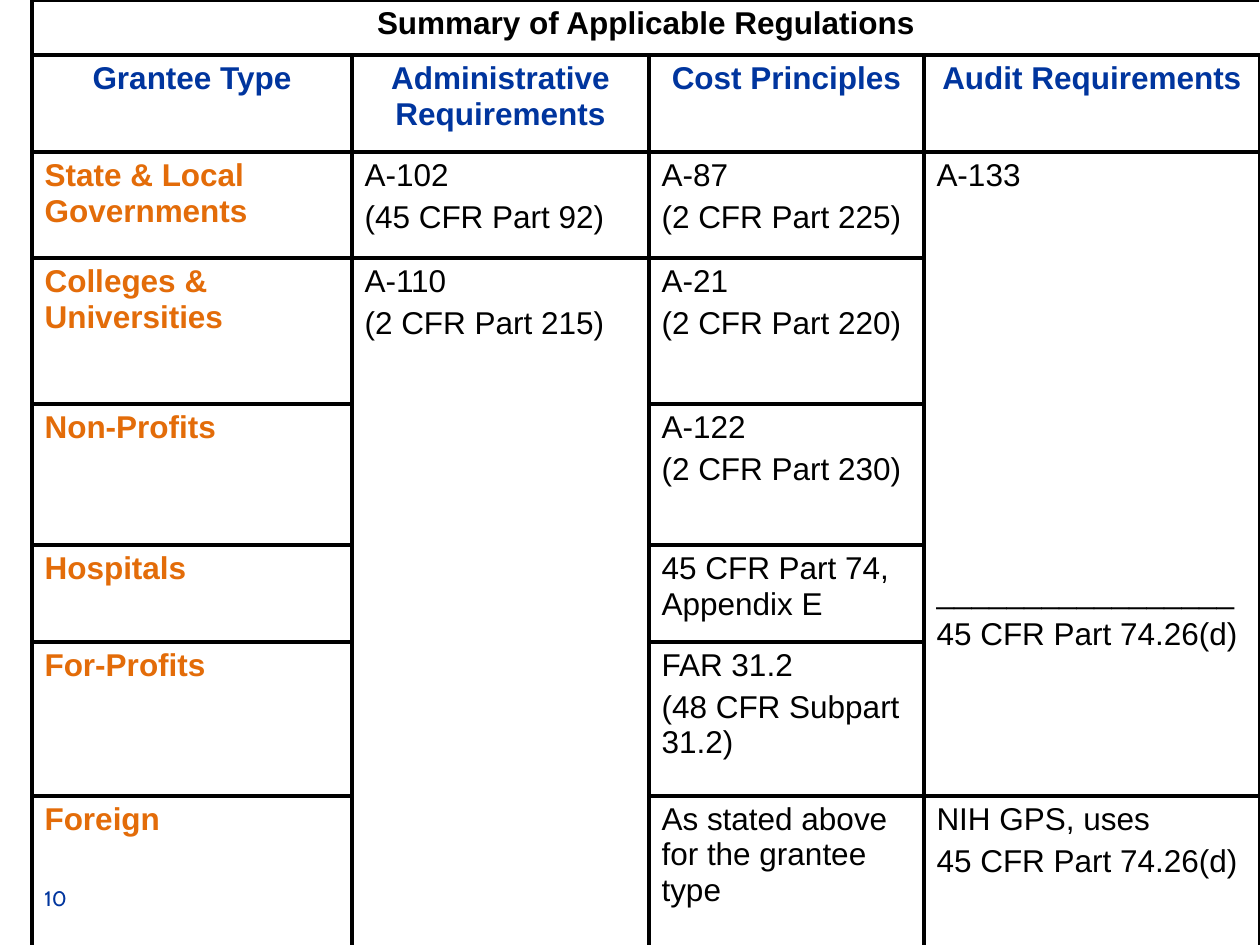
from lxml import etree
from pptx import Presentation
from pptx.dml.color import RGBColor
from pptx.enum.text import MSO_ANCHOR, PP_ALIGN
from pptx.oxml.ns import qn
from pptx.util import Emu, Pt

LEFT, CENTER = PP_ALIGN.LEFT, PP_ALIGN.CENTER
MIDDLE = MSO_ANCHOR.MIDDLE

# Content: row, column, row span, column span, role, paragraphs
AUDIT_RULE = "_________________"
CELLS = [
    (0, 0, 1, 4, "title", ["Summary of Applicable Regulations"]),
    (1, 0, 1, 1, "header", ["Grantee Type"]),
    (1, 1, 1, 1, "header", ["Administrative Requirements"]),
    (1, 2, 1, 1, "header", ["Cost Principles"]),
    (1, 3, 1, 1, "header", ["Audit Requirements"]),
    (2, 0, 1, 1, "grantee", ["State & Local Governments"]),
    (3, 0, 1, 1, "grantee", ["Colleges & Universities"]),
    (4, 0, 1, 1, "grantee", ["Non-Profits"]),
    (5, 0, 1, 1, "grantee", ["Hospitals"]),
    (6, 0, 1, 1, "grantee", ["For-Profits"]),
    (7, 0, 1, 1, "grantee", ["Foreign"]),
    (2, 1, 1, 1, "body", ["A-102", "(45 CFR Part 92)"]),
    (3, 1, 5, 1, "body", ["A-110", "(2 CFR Part 215)"]),
    (2, 2, 1, 1, "body", ["A-87", "(2 CFR Part 225)"]),
    (3, 2, 1, 1, "body", ["A-21", "(2 CFR Part 220)"]),
    (4, 2, 1, 1, "body", ["A-122", "(2 CFR Part 230)"]),
    (5, 2, 1, 1, "body", ["45 CFR Part 74, Appendix E"]),
    (6, 2, 1, 1, "body", ["FAR 31.2", "(48 CFR Subpart 31.2)"]),
    (7, 2, 1, 1, "body", ["As stated above for the grantee type"]),
    (2, 3, 5, 1, "body", ["A-133", AUDIT_RULE, "45 CFR Part 74.26(d)"]),
    (7, 3, 1, 1, "body", ["NIH GPS, uses", "45 CFR Part 74.26(d)"]),
]
SLIDE_NUMBER = "10"

# Layout in px
PX = 914400 // 126
SLIDE_SIZE = (1260, 945)
TABLE_LEFT, TABLE_TOP = 32, 0
COLUMN_WIDTHS = [320, 297, 275, 336]
ROW_HEIGHTS = [55, 97, 106, 146, 141, 97, 154, 272]
NUMBER_BOX = (32, 873, 294, 50)
THIN_EDGE = (7, 3)  # row and column of the cell below the thin line

THEME = {
    "font": "Arial", "size": Pt(18),
    "number_font": "Cabin", "number_size": Pt(12),
    "blue": RGBColor(0x00, 0x35, 0x9E),
    "line": "000000", "line_width": Pt(2.25), "thin_width": Pt(1),
    "gap": Pt(3.6), "rule_gap": Pt(218),
}
# Role: colour, bold, alignment
ROLES = {
    "title": (RGBColor(0, 0, 0), True, CENTER),
    "header": (THEME["blue"], True, CENTER),
    "grantee": (RGBColor(0xE3, 0x6C, 0x09), True, LEFT),
    "body": (RGBColor(0, 0, 0), False, LEFT),
}


def px(length):
    return Emu(length * PX)


def format_run(run, font, size, color, bold):
    run.font.name = font
    run.font.size = size
    run.font.bold = bold
    run.font.color.rgb = color


def add_borders(cell, widths):
    """Put the border lines ahead of the fill, in schema order."""
    properties = cell._tc.get_or_add_tcPr()
    for index, (side, width) in enumerate(widths.items()):
        line = etree.Element(qn("a:ln" + side), w=str(int(width)))
        fill = etree.SubElement(line, qn("a:solidFill"))
        etree.SubElement(fill, qn("a:srgbClr"), val=THEME["line"])
        properties.insert(index, line)


def border_widths(row, column, first, last):
    """Give a width to each side of the cell on its merged area's edge."""
    thick, thin = THEME["line_width"], THEME["thin_width"]
    above_thin = (row + 1, column) == THIN_EDGE
    below_thin = (row, column) == THIN_EDGE
    sides = {
        "L": (column == first[1], thick),
        "R": (column == last[1], thick),
        "T": (row == first[0], thin if below_thin else thick),
        "B": (row == last[0], thin if above_thin else thick),
    }
    return {side: width for side, (edge, width) in sides.items() if edge}


def fill_text(cell, role, lines):
    color, bold, alignment = ROLES[role]
    cell.text_frame.text = "\n".join(lines)
    for index, paragraph in enumerate(cell.text_frame.paragraphs):
        paragraph.alignment = alignment
        if index:
            is_rule = paragraph.text == AUDIT_RULE
            paragraph.space_before = THEME["rule_gap" if is_rule else "gap"]
        for run in paragraph.runs:
            format_run(run, THEME["font"], THEME["size"], color, bold)


def add_regulations_table(slide):
    frame = slide.shapes.add_table(
        len(ROW_HEIGHTS), len(COLUMN_WIDTHS), px(TABLE_LEFT), px(TABLE_TOP),
        px(sum(COLUMN_WIDTHS)), px(sum(ROW_HEIGHTS)))
    table = frame.table
    table.first_row = table.horz_banding = False
    for column, width in zip(table.columns, COLUMN_WIDTHS):
        column.width = px(width)
    for row, height in zip(table.rows, ROW_HEIGHTS):
        row.height = px(height)

    for top, left, row_span, column_span, role, lines in CELLS:
        first = (top, left)
        last = (top + row_span - 1, left + column_span - 1)
        for row in range(top, last[0] + 1):
            for column in range(left, last[1] + 1):
                cell = table.cell(row, column)
                cell.fill.background()
                add_borders(cell, border_widths(row, column, first, last))
        if first != last:
            table.cell(*first).merge(table.cell(*last))
        fill_text(table.cell(*first), role, lines)


def add_slide_number(slide):
    box = slide.shapes.add_textbox(*map(px, NUMBER_BOX))
    box.text_frame.word_wrap = True
    box.text_frame.vertical_anchor = MIDDLE
    box.text_frame.text = SLIDE_NUMBER
    format_run(box.text_frame.paragraphs[0].runs[0], THEME["number_font"],
               THEME["number_size"], THEME["blue"], False)


def main():
    presentation = Presentation()
    presentation.slide_width, presentation.slide_height = map(px, SLIDE_SIZE)
    blank_layout = presentation.slide_layouts[6]
    slide = presentation.slides.add_slide(blank_layout)
    add_regulations_table(slide)
    add_slide_number(slide)
    presentation.save("out.pptx")


if __name__ == "__main__":
    main()
